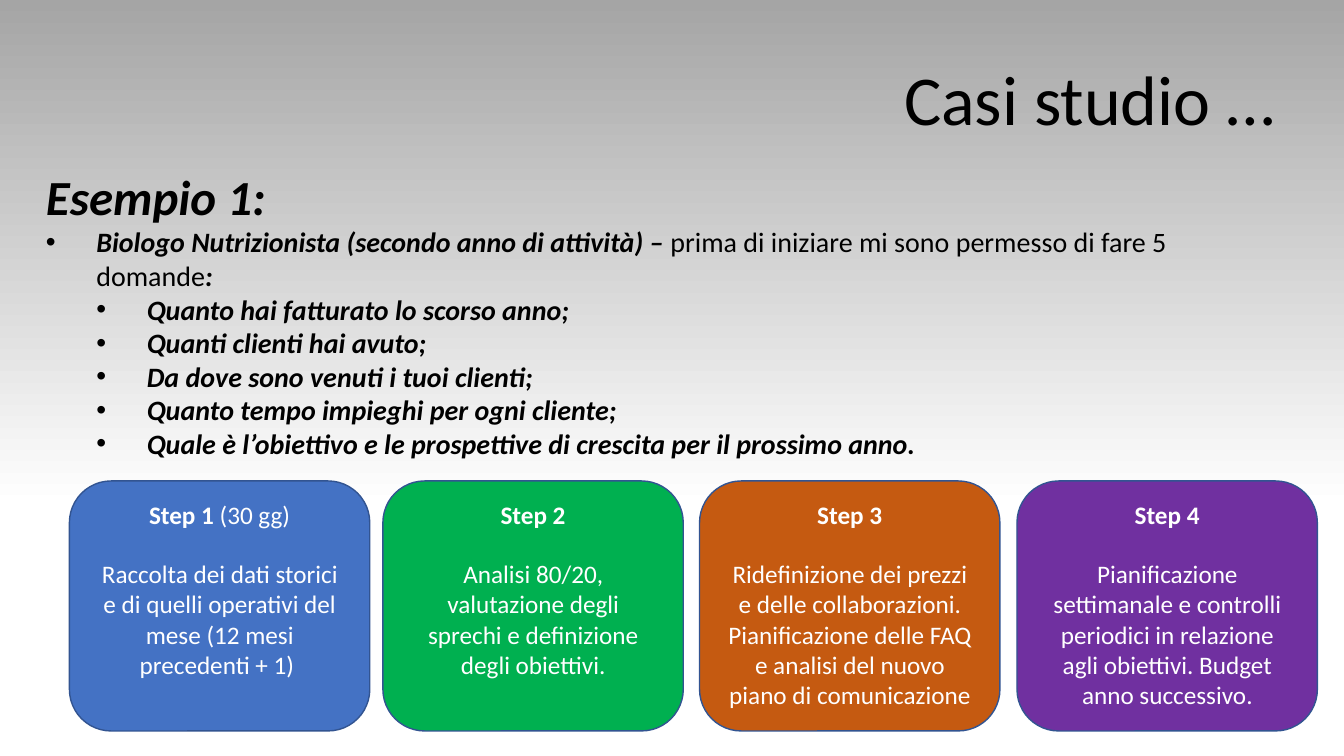
from pptx import Presentation
from pptx.dml.color import RGBColor
from pptx.enum.shapes import MSO_SHAPE
from pptx.enum.text import MSO_ANCHOR, MSO_AUTO_SIZE, PP_ALIGN
from pptx.oxml.ns import qn
from pptx.util import Cm, Pt
from lxml.etree import SubElement

FONT = "Calibri"
BLACK, WHITE = "000000", "FFFFFF"
TABS = 1.27  # bullet indent in cm

ASKS = [
    "Quanto hai fatturato lo scorso anno;",
    "Quanti clienti hai avuto;",
    "Da dove sono venuti i tuoi clienti;",
    "Quanto tempo impieghi per ogni cliente;",
    "Quale è l’obiettivo e le prospettive di crescita per il prossimo anno.",
]

# left in cm, fill, note after the heading, text
STEPS = [
    (1.75, "4472C4", " (30 gg)",
     "Raccolta dei dati storici e di quelli operativi del mese "
     "(12 mesi precedenti + 1) "),
    (9.65, "00B050", "",
     "Analisi 80/20, valutazione degli sprechi e definizione degli obiettivi."),
    (17.63, "C55A11", "",
     "Ridefinizione dei prezzi e delle collaborazioni. Pianificazione delle "
     "FAQ e analisi del nuovo piano di comunicazione"),
    (25.63, "7030A0", "",
     "Pianificazione settimanale e controlli periodici in relazione agli "
     "obiettivi. Budget anno successivo."),
]


def color(code):
    return RGBColor.from_string(code)


def add_run(para, text, size, tint, bold=False, slant=False):
    run = para.add_run()
    run.text = text
    font = run.font
    font.name, font.size = FONT, Pt(size)
    font.bold, font.italic = bold, slant
    font.color.rgb = color(tint)


def add_box(slide, left, top, width, height):
    box = slide.shapes.add_textbox(Cm(left), Cm(top), Cm(width), Cm(height))
    box.text_frame.word_wrap = True
    return box.text_frame


def add_bullet(frame, level):
    para = frame.add_paragraph()
    para.level = level
    props = para._p.get_or_add_pPr()
    props.set("marL", str(Cm(TABS * (level + 1))))
    props.set("indent", str(Cm(-TABS)))
    SubElement(props, qn("a:buFont")).set("typeface", "Arial")
    SubElement(props, qn("a:buChar")).set("char", "•")
    return para


def set_back(slide):
    fill = slide.background.fill
    fill.gradient()
    fill.gradient_angle = 90
    for stop, place, tint in zip(fill.gradient_stops, (0.33, 1), (WHITE, "A5A5A5")):
        stop.position = place
        stop.color.rgb = color(tint)


def set_title(slide, text):
    title = slide.shapes.title
    title.left, title.top = Cm(22.45), Cm(1.27)
    title.width, title.height = Cm(10.34), Cm(2.39)
    frame = title.text_frame
    frame.word_wrap = False
    frame.auto_size = MSO_AUTO_SIZE.NONE
    frame.vertical_anchor = MSO_ANCHOR.TOP
    para = frame.paragraphs[0]
    para.alignment = PP_ALIGN.RIGHT
    para.line_spacing = 1.0
    add_run(para, text, 50, BLACK)


def add_case(slide):
    frame = add_box(slide, 0.91, 4.06, 31.04, 8.59)
    add_run(frame.paragraphs[0], "Esempio 1:", 35, BLACK, True, True)
    para = add_bullet(frame, 0)
    add_run(para, "Biologo Nutrizionista (secondo anno di attività) – ",
            20, BLACK, True, True)
    add_run(para, "prima di iniziare mi sono permesso di fare 5 domande", 20, BLACK)
    add_run(para, ":", 20, BLACK, True, True)
    for ask in ASKS:
        add_run(add_bullet(frame, 1), ask, 20, BLACK, True, True)


def add_step(slide, num, left, tint, note, text):
    # Card
    card = slide.shapes.add_shape(MSO_SHAPE.ROUNDED_RECTANGLE,
                                  Cm(left), Cm(12.12), Cm(7.57), Cm(6.3))
    card.shadow.inherit = False
    card.fill.solid()
    card.fill.fore_color.rgb = color(tint)
    card.line.color.rgb = color("325491")
    card.line.width = Pt(1)
    # Heading
    para = add_box(slide, left, 12.45, 7.57, 1.02).paragraphs[0]
    para.alignment = PP_ALIGN.CENTER
    add_run(para, f"Step {num}", 18, WHITE, True)
    if note:
        add_run(para, note, 18, WHITE)
    # Text
    para = add_box(slide, left + 0.44, 13.95, 6.7, 4.1).paragraphs[0]
    para.alignment = PP_ALIGN.CENTER
    add_run(para, text, 18, WHITE)


def main():
    deck = Presentation()
    deck.slide_width, deck.slide_height = Cm(33.87), Cm(19.05)
    slide = deck.slides.add_slide(deck.slide_layouts[5])
    set_back(slide)
    set_title(slide, "Casi studio … ")
    add_case(slide)
    for num, step in enumerate(STEPS, 1):
        add_step(slide, num, *step)
    deck.save("out.pptx")


if __name__ == "__main__":
    main()
